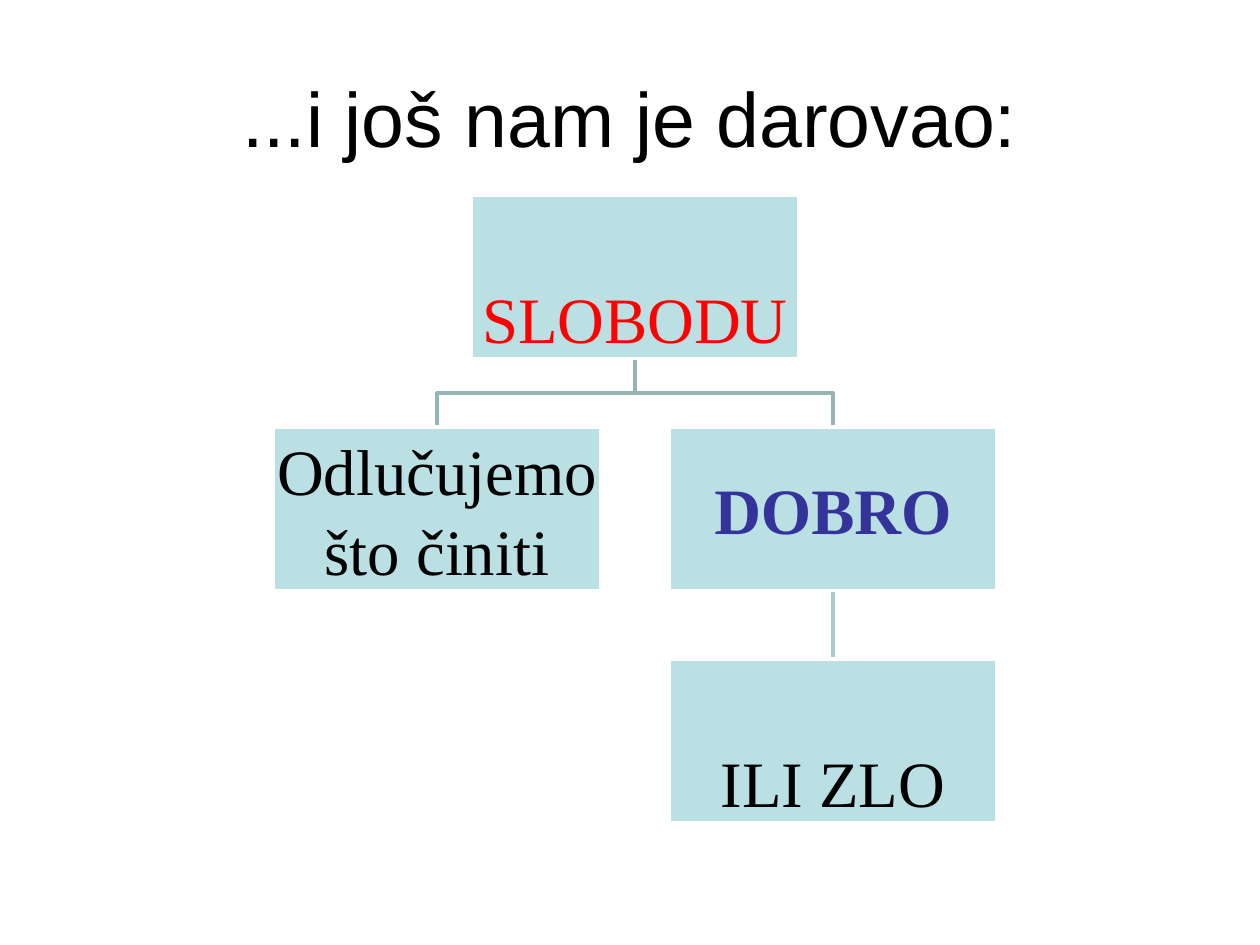
from pptx import Presentation
from pptx.dml.color import RGBColor
from pptx.enum.shapes import MSO_CONNECTOR, MSO_SHAPE
from pptx.enum.text import MSO_ANCHOR, PP_ALIGN
from pptx.util import Cm, Pt
from lxml.etree import SubElement
from pptx.oxml.ns import qn

BLACK = RGBColor(0, 0, 0)
WHITE = RGBColor(255, 255, 255)
RED = RGBColor(255, 0, 0)
NAVY = RGBColor(0x33, 0x33, 0x99)
AQUA = RGBColor(0xBB, 0xE0, 0xE3)
TEAL = RGBColor(0x96, 0xB3, 0xB6)
PALE = RGBColor(0xAA, 0xCB, 0xCE)

TITLE = "...i još nam je darovao:"
LOW, MID = MSO_ANCHOR.BOTTOM, MSO_ANCHOR.MIDDLE
NODES = [
    ("SLOBODU", 0.5, 0, RED, False, LOW),
    ("Odlučujemo\nšto činiti", 0, 1, BLACK, False, LOW),
    ("DOBRO", 1, 1, NAVY, True, MID),
    ("ILI ZLO", 1, 2, BLACK, False, LOW),
]
LINKS = [(2, 3, PALE), (0, 2, TEAL), (0, 1, TEAL)]

WIDE, HIGH = 6.6, 3.3
LEFT, TOP = 5.51, 3.93
STEP, DROP = 7.98, 4.68


def place(node):
    return LEFT + node[1] * STEP, TOP + node[2] * DROP


def write(frame, text, font, size, color, bold=False):
    frame.word_wrap = True
    frame.text = text
    for par in frame.paragraphs:
        par.alignment = PP_ALIGN.CENTER
        for run in par.runs:
            run.font.name = font
            run.font.size = Pt(size)
            run.font.color.rgb = color
            run.font.bold = bold


def link(shapes, start, end, color):
    (x1, y1), (x2, y2) = place(start), place(end)
    x1, x2, y1 = x1 + WIDE / 2, x2 + WIDE / 2, y1 + HIGH
    if x1 == x2:
        line = shapes.add_connector(
            MSO_CONNECTOR.STRAIGHT, Cm(x1), Cm(y1), Cm(x2), Cm(y2))
        SubElement(line._element.spPr, qn("a:effectLst"))
    else:
        half = (y1 + y2) / 2
        path = shapes.build_freeform(Cm(x1), Cm(y1))
        path.add_line_segments(
            [(Cm(x1), Cm(half)), (Cm(x2), Cm(half)), (Cm(x2), Cm(y2))],
            close=False)
        line = path.convert_to_shape()
        line.fill.background()
        line.shadow.inherit = False
    line.line.color.rgb = color
    line.line.width = Pt(2)


def box(shapes, node):
    text, _, _, color, bold, anchor = node
    x, y = place(node)
    rect = shapes.add_shape(
        MSO_SHAPE.RECTANGLE, Cm(x), Cm(y), Cm(WIDE), Cm(HIGH))
    rect.shadow.inherit = False
    rect.fill.solid()
    rect.fill.fore_color.rgb = AQUA
    rect.line.color.rgb = WHITE
    rect.line.width = Pt(2)
    frame = rect.text_frame
    frame.margin_left = frame.margin_right = Cm(0.05)
    frame.margin_top = frame.margin_bottom = Cm(0.05)
    frame.vertical_anchor = anchor
    write(frame, text, "Times New Roman", 37, color, bold)
    for par in frame.paragraphs[1:]:
        par.space_before = Pt(1.5)


def main():
    deck = Presentation()
    deck.slide_width, deck.slide_height = Cm(25.4), Cm(19.05)
    shapes = deck.slides.add_slide(deck.slide_layouts[6]).shapes
    head = shapes.add_textbox(Cm(1.27), Cm(0.76), Cm(22.86), Cm(3.18))
    head.text_frame.vertical_anchor = MID
    write(head.text_frame, TITLE, "Arial", 44, BLACK)
    for start, end, color in LINKS:
        link(shapes, NODES[start], NODES[end], color)
    for node in NODES:
        box(shapes, node)
    deck.save("out.pptx")


if __name__ == "__main__":
    main()
